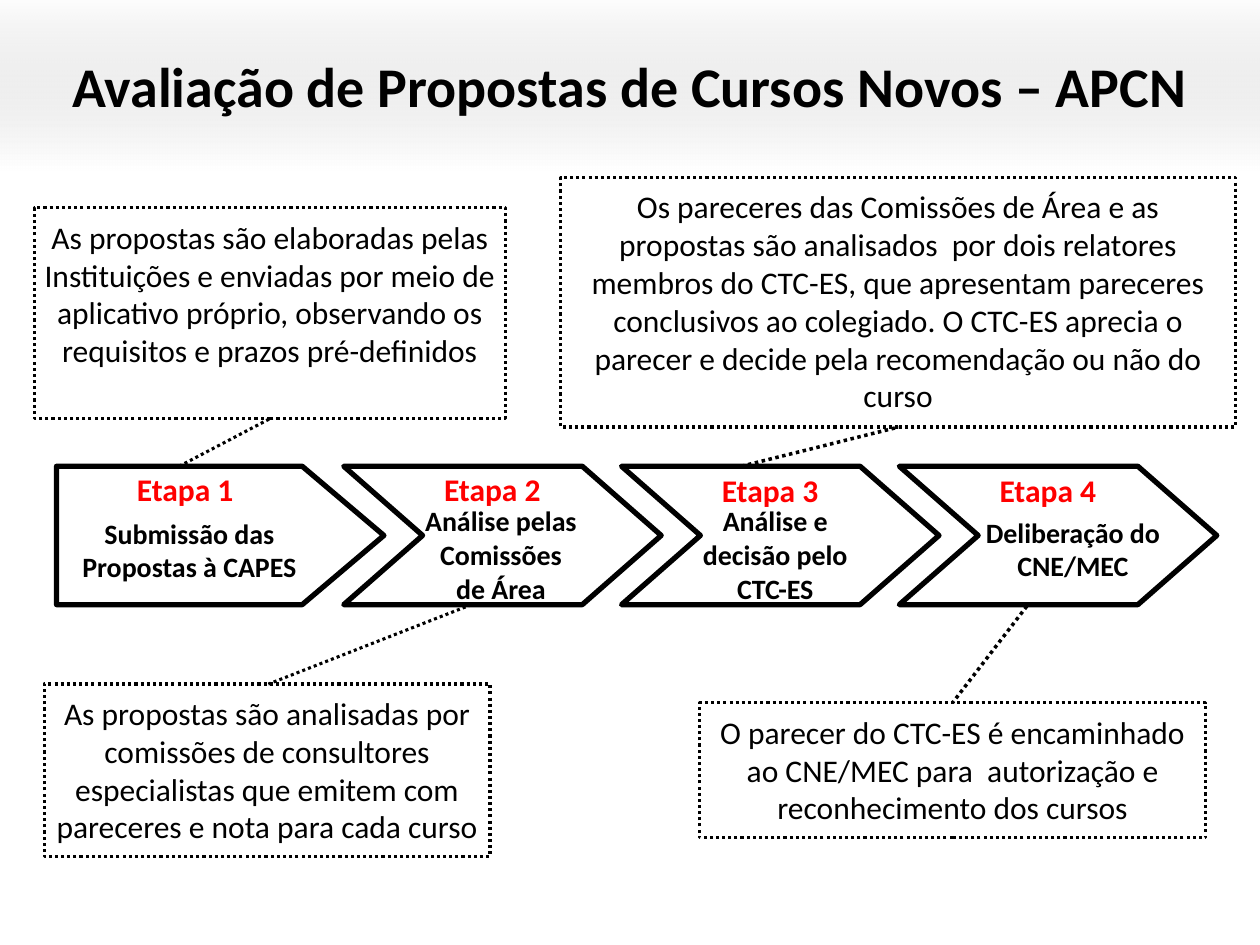
from dataclasses import dataclass

import lxml.etree
import pptx
import pptx.dml.color
import pptx.enum.dml
import pptx.enum.shapes
import pptx.enum.text
import pptx.oxml.ns
import pptx.util

Cm = pptx.util.Cm
Pt = pptx.util.Pt
SHAPE = pptx.enum.shapes.MSO_SHAPE
FONT = "Calibri"
COLORS = {"text": "000000", "stage": "FF0000", "grey": "BFBFBF", "white": "FFFFFF"}

STAGE_TOP, STAGE_HEIGHT = 9.4, 2.79
LABEL_WIDTH, LABEL_HEIGHT = 5.59, 0.76
CHEVRON_LEFT, CHEVRON_STEP, CHEVRON_WIDTH = 6.93, 5.6, 6.4


@dataclass
class Box:
    left: float
    top: float
    width: float
    height: float

    def lengths(self) -> list:
        return [Cm(v) for v in (self.left, self.top, self.width, self.height)]


@dataclass
class Stage:
    label_top: float
    text: str
    text_box: Box


@dataclass
class Note:
    text: str
    box: Box
    start: tuple  # leader line, at the stage
    end: tuple  # leader line, at the note
    weight: float


STAGES = [
    Stage(9.47, "Submissão das Propostas à CAPES", Box(1.52, 10.41, 4.6, 1.37)),
    Stage(9.47, "Análise pelas Comissões\nde Área", Box(8.46, 10.16, 3.28, 2.06)),
    Stage(9.5, "Análise e decisão pelo CTC-ES", Box(13.74, 10.16, 3.78, 2.06)),
    Stage(9.5, "Deliberação do CNE/MEC", Box(19.74, 10.39, 3.78, 1.37)),
]

NOTES = [
    Note("As propostas são elaboradas pelas Instituições e enviadas por meio de "
         "aplicativo próprio, observando os requisitos e prazos pré-definidos",
         Box(0.69, 4.19, 9.5, 4.24), (3.61, 9.4), (5.46, 8.43), 1.75),
    Note("As propostas são analisadas por comissões de consultores especialistas "
         "que emitem com pareceres e nota para cada curso",
         Box(0.89, 13.79, 8.99, 3.48), (9.5, 12.19), (5.41, 13.79), 1.75),
    Note("Os pareceres das Comissões de Área e as propostas são analisados  por dois "
         "relatores membros do CTC-ES, que apresentam pareceres conclusivos ao "
         "colegiado. O CTC-ES aprecia o parecer e decide pela recomendação ou não do curso",
         Box(11.3, 3.58, 13.61, 5.03), (14.94, 9.4), (18.11, 8.61), 2),
    Note("O parecer do CTC-ES é encaminhado\vao CNE/MEC para  autorização e "
         "reconhecimento dos cursos",
         Box(14.1, 14.17, 10.21, 2.72), (20.7, 12.22), (19.2, 14.17), 2),
]


def rgb(name: str) -> pptx.dml.color.RGBColor:
    return pptx.dml.color.RGBColor.from_string(COLORS[name])


def write(sp, text: str, size: float, bold: bool = False,
          color: str = "text", inset: float = 0) -> None:
    tf = sp.text_frame
    tf.word_wrap = True
    tf.vertical_anchor = pptx.enum.text.MSO_ANCHOR.TOP
    tf.margin_left = tf.margin_right = tf.margin_top = tf.margin_bottom = Cm(inset)
    tf.text = text
    for p in tf.paragraphs:
        p.alignment = pptx.enum.text.PP_ALIGN.CENTER
        for r in p.runs:
            r.font.name = FONT
            r.font.size = Pt(size)
            r.font.bold = bold
            r.font.color.rgb = rgb(color)


def add_text(s, box: Box, text: str, size: float, color: str = "text",
             inset: float = 0) -> None:
    write(s.shapes.add_textbox(*box.lengths()), text, size, True, color, inset)


def style_line(line, weight: float, dotted: bool = False) -> None:
    line.color.rgb = rgb("text")
    line.width = Pt(weight)
    if dotted:
        line.dash_style = pptx.enum.dml.MSO_LINE.ROUND_DOT


def add_outline(s, kind, box: Box, weight: float, dotted: bool = False):
    sp = s.shapes.add_shape(kind, *box.lengths())
    sp.shadow.inherit = False
    sp.fill.background()
    style_line(sp.line, weight, dotted)
    return sp


def add_banner(s) -> None:
    sp = s.shapes.add_shape(SHAPE.RECTANGLE, *Box(0, -0.1, 25.4, 3.53).lengths())
    sp.shadow.inherit = False
    sp.line.fill.background()
    sp.fill.gradient()
    sp.fill.gradient_angle = 270
    for stop, position, color in zip(sp.fill.gradient_stops, (0, 1), ("grey", "white")):
        stop.position = position
        stop.color.rgb = rgb(color)
    # The grey end is fully transparent
    qn = pptx.oxml.ns.qn
    grey = next(sp._element.spPr.iter(qn("a:srgbClr")))
    lxml.etree.SubElement(grey, qn("a:alpha")).set("val", "0")


def add_stage(s, index: int, stage: Stage) -> None:
    if index == 0:
        kind, left, width, adjustment = SHAPE.PENTAGON, 1.14, 6.6, 0.59
        label_left = left - 0.2
    else:
        kind, width, adjustment = SHAPE.CHEVRON, CHEVRON_WIDTH, 0.57
        left = CHEVRON_LEFT + (index - 1) * CHEVRON_STEP
        label_left = left + 0.2
    sp = add_outline(s, kind, Box(left, STAGE_TOP, width, STAGE_HEIGHT), 3)
    sp.adjustments[0] = adjustment
    label_box = Box(label_left, stage.label_top, LABEL_WIDTH, LABEL_HEIGHT)
    add_text(s, label_box, f"Etapa {index + 1}", 18, "stage")
    add_text(s, stage.text_box, stage.text, 16)


def add_note(s, note: Note) -> None:
    sp = add_outline(s, SHAPE.RECTANGLE, note.box, 1.75, dotted=True)
    write(sp, note.text, 18, inset=0.2)
    leader = s.shapes.add_connector(
        pptx.enum.shapes.MSO_CONNECTOR.STRAIGHT,
        *[Cm(v) for v in note.start + note.end])
    style_line(leader.line, note.weight, dotted=True)
    lxml.etree.SubElement(leader._element.spPr, pptx.oxml.ns.qn("a:effectLst"))


def main() -> None:
    prs = pptx.Presentation()
    prs.slide_width, prs.slide_height = Cm(25.4), Cm(19.05)
    s = prs.slides.add_slide(prs.slide_layouts[6])

    # Heading
    add_banner(s)
    add_text(s, Box(0, 0.91, 25.4, 1.63),
             "Avaliação de Propostas de Cursos Novos – APCN", 32, inset=0.13)

    # Process stages
    for index, stage in enumerate(STAGES):
        add_stage(s, index, stage)

    # Explanations with leader lines
    for note in NOTES:
        add_note(s, note)

    prs.save("out.pptx")


if __name__ == "__main__":
    main()
